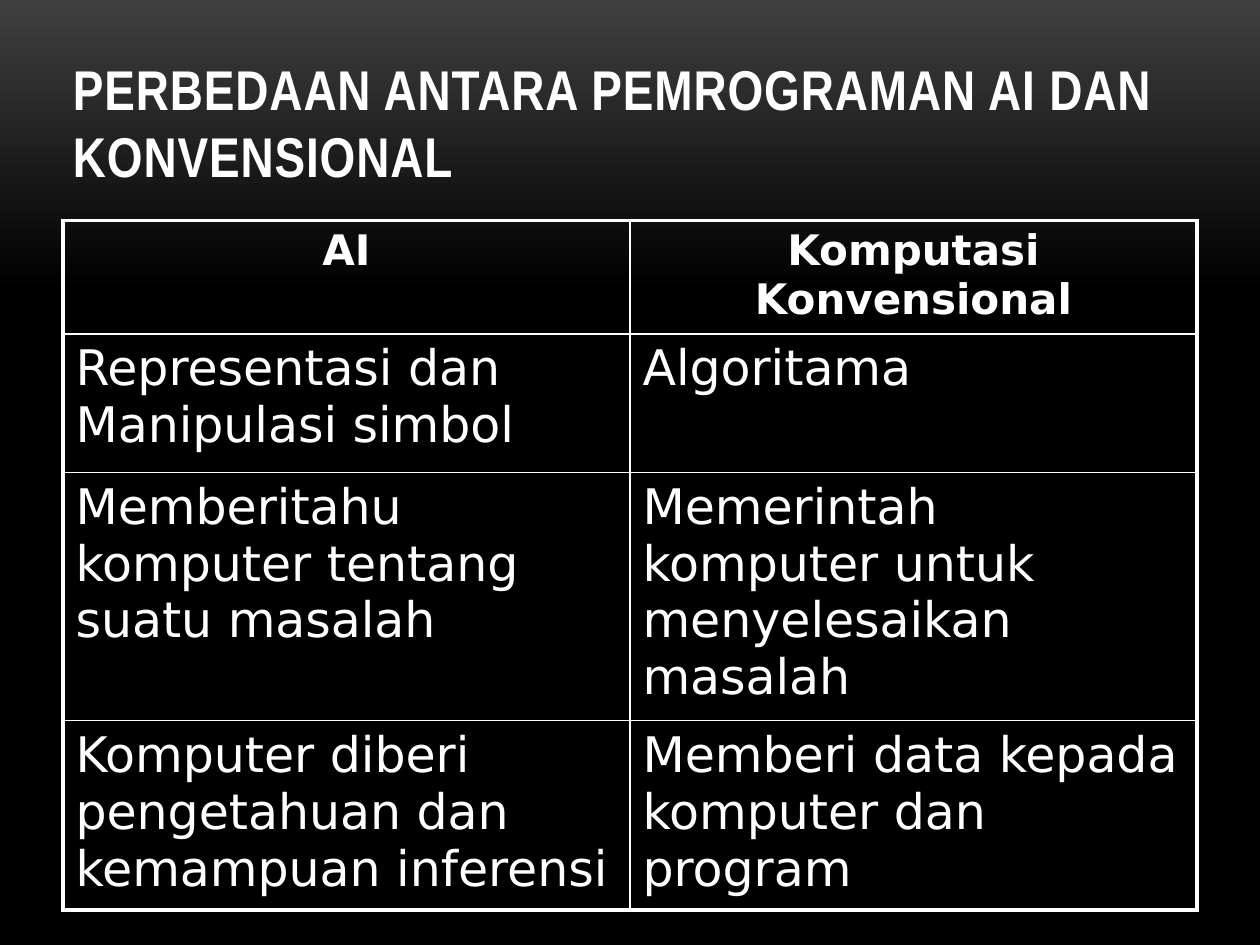
from dataclasses import dataclass

import lxml.etree
import pptx
import pptx.dml.color
import pptx.enum.text
import pptx.oxml.ns
import pptx.table
import pptx.text.text
import pptx.util
from pptx.util import Inches

WHITE = pptx.dml.color.RGBColor(0xFF, 0xFF, 0xFF)
BLACK = pptx.dml.color.RGBColor(0x00, 0x00, 0x00)
CHARCOAL = pptx.dml.color.RGBColor(0x3F, 0x3F, 0x3F)

OUTER_BORDER = pptx.util.Pt(2.25)
INNER_BORDER = pptx.util.Pt(1)
COLUMN_WIDTH = Inches(4.5)


@dataclass
class ComparisonRow:
    ai: str
    conventional: str
    height: float
    is_header: bool = False


ROWS = [
    ComparisonRow("AI", "Komputasi Konvensional", 0.9, is_header=True),
    ComparisonRow("Representasi dan Manipulasi simbol", "Algoritama", 1.1),
    ComparisonRow("Memberitahu komputer tentang suatu masalah",
                  "Memerintah komputer untuk menyelesaikan masalah", 1.97),
    ComparisonRow("Komputer diberi pengetahuan dan kemampuan inferensi",
                  "Memberi data kepada komputer dan program", 1.5),
]


def set_font(paragraph: pptx.text.text._Paragraph, name: str, size: int, bold: bool) -> None:
    paragraph.font.name = name
    paragraph.font.size = pptx.util.Pt(size)
    paragraph.font.bold = bold
    paragraph.font.color.rgb = WHITE


def set_borders(cell: pptx.table._Cell, outer_sides: dict[str, bool]) -> None:
    """Draw the four cell borders, heavier on the sides at the table's edge."""
    properties = cell._tc.get_or_add_tcPr()
    for position, (side, is_outer) in enumerate(outer_sides.items()):
        width = OUTER_BORDER if is_outer else INNER_BORDER
        line = lxml.etree.Element(pptx.oxml.ns.qn(f"a:ln{side}"), w=str(int(width)))
        fill = lxml.etree.SubElement(line, pptx.oxml.ns.qn("a:solidFill"))
        lxml.etree.SubElement(fill, pptx.oxml.ns.qn("a:srgbClr"), val=str(WHITE))
        properties.insert(position, line)


def add_title(slide: pptx.slide.Slide, text: str) -> None:
    shape = slide.shapes.add_textbox(Inches(0.48), Inches(0.11), Inches(9.02), Inches(1.44))
    text_frame = shape.text_frame
    text_frame.word_wrap = True
    text_frame.vertical_anchor = pptx.enum.text.MSO_ANCHOR.BOTTOM
    paragraph = text_frame.paragraphs[0]
    set_font(paragraph, "Arial Narrow", 32, bold=True)
    run = paragraph.add_run()
    run.text = text
    run._r.get_or_add_rPr().set("spc", "50")


def add_comparison_table(slide: pptx.slide.Slide, rows: list[ComparisonRow]) -> None:
    height = Inches(sum(row.height for row in rows))
    table = slide.shapes.add_table(
        len(rows), 2, Inches(0.5), Inches(1.75), 2 * COLUMN_WIDTH, height).table
    table.first_row = False
    table.horz_banding = False
    for column in table.columns:
        column.width = COLUMN_WIDTH
    for row_index, row in enumerate(rows):
        table.rows[row_index].height = Inches(row.height)
        for column_index, text in enumerate((row.ai, row.conventional)):
            cell = table.cell(row_index, column_index)
            cell.text = text
            cell.fill.background()
            paragraph = cell.text_frame.paragraphs[0]
            set_font(paragraph, "DejaVu Sans", 24 if row.is_header else 28, row.is_header)
            if row.is_header:
                paragraph.alignment = pptx.enum.text.PP_ALIGN.CENTER
            set_borders(cell, {
                "L": column_index == 0,
                "R": column_index == 1,
                "T": row_index == 0,
                "B": row_index == len(rows) - 1,
            })


def main() -> None:
    presentation = pptx.Presentation()
    presentation.slide_width = Inches(10)
    presentation.slide_height = Inches(7.5)
    slide = presentation.slides.add_slide(presentation.slide_layouts[6])

    # Background: charcoal fading to black from the top
    background = slide.background.fill
    background.gradient()
    background.gradient_angle = 270
    stops = ((0, CHARCOAL), (0.31, BLACK))
    for stop, (position, color) in zip(background.gradient_stops, stops):
        stop.position = position
        stop.color.rgb = color

    # Heading and comparison
    add_title(slide, "PERBEDAAN ANTARA PEMROGRAMAN AI DAN KONVENSIONAL")
    add_comparison_table(slide, ROWS)

    presentation.save("out.pptx")


if __name__ == "__main__":
    main()
